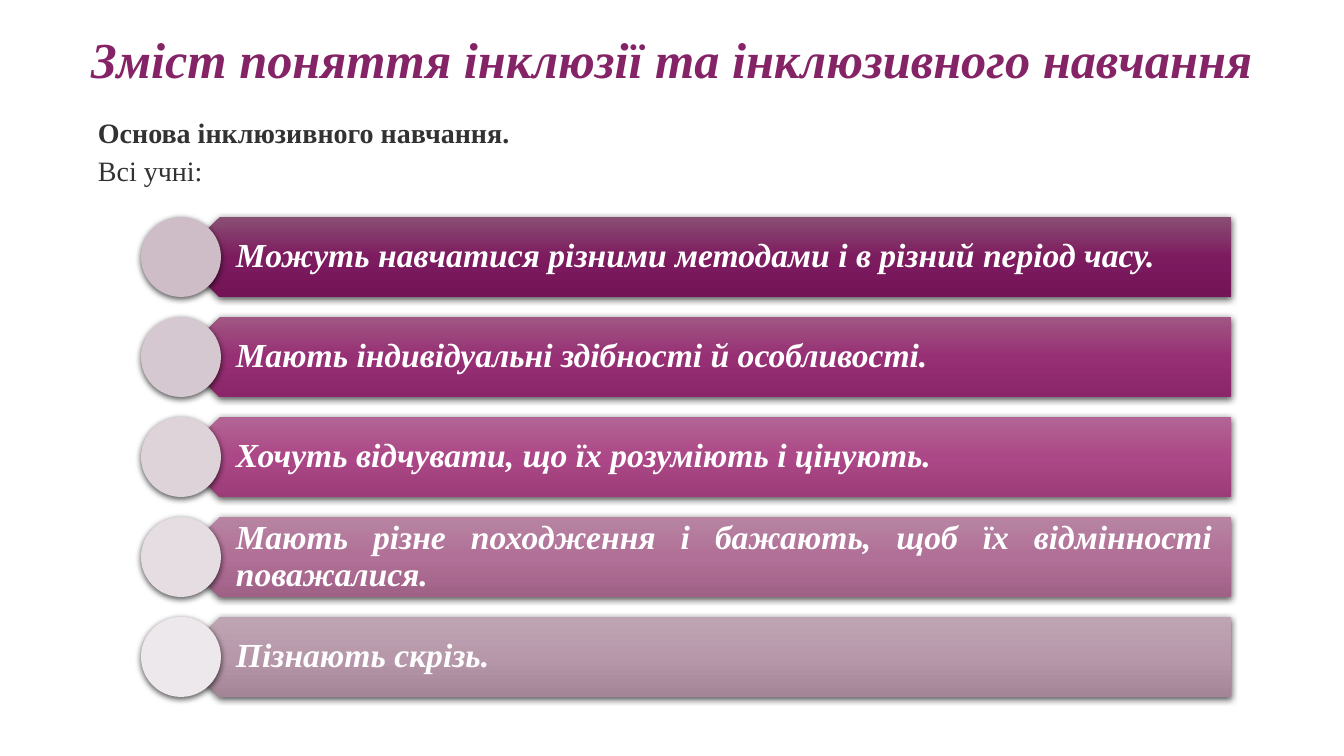
from pptx import Presentation
from pptx.dml.color import RGBColor
from pptx.enum.shapes import MSO_SHAPE as SHAPE
from pptx.enum.text import MSO_ANCHOR as ANCHOR, MSO_AUTO_SIZE as AUTO, PP_ALIGN as ALIGN
from pptx.oxml import parse_xml
from pptx.oxml.ns import nsdecls, qn
from pptx.util import Pt

PX = 9144000 / 1008  # EMU per px, 100.8 px to the inch


def box(left, top, width, height, shape=None):
    """Add a text box, or a borderless preset shape with a soft shadow."""
    area = [round(v * PX) for v in (left, top, width, height)]
    if shape is None:
        return slide.shapes.add_textbox(*area)
    item = slide.shapes.add_shape(shape, *area)
    item.line.fill.background()
    item.shadow.inherit = False
    item._element.spPr.find(qn("a:effectLst")).append(parse_xml(
        f'<a:outerShdw {nsdecls("a")} blurRad="57150" dist="19050" dir="5400000" '
        'algn="ctr" rotWithShape="0"><a:srgbClr val="000000">'
        '<a:alpha val="63000"/></a:srgbClr></a:outerShdw>'))
    return item


def write(item, text, size, color, align, spacing, bold=True, italic=True):
    """Fill an item with text in one uniform style."""
    frame = item.text_frame
    frame.word_wrap = True
    frame.text = text
    for paragraph in frame.paragraphs:
        paragraph.alignment = align
        paragraph.line_spacing = spacing
        for run in paragraph.runs:
            font = run.font
            font.name, font.size = "Times New Roman", Pt(size)
            font.bold, font.italic = bold, italic
            font.color.rgb = RGBColor.from_string(color)
    return frame


prs = Presentation()
prs.slide_width, prs.slide_height = round(1344 * PX), round(756 * PX)
slide = prs.slides.add_slide(prs.slide_layouts[6])

# Title
title = write(box(48, 28, 1248, 66), "Зміст поняття інклюзії та інклюзивного навчання",
              36, "852367", ALIGN.CENTER, 0.9)
title.vertical_anchor = ANCHOR.BOTTOM

# Introduction
intro = write(box(48, 106, 1248, 88), "Основа інклюзивного навчання.\nВсі учні:",
              20, "323232", ALIGN.JUSTIFY, 1.14, italic=False)
intro.auto_size = AUTO.SHAPE_TO_FIT_TEXT
intro.paragraphs[1].runs[0].font.bold = False
for paragraph in intro.paragraphs:
    paragraph._p.get_or_add_pPr().set("indent", str(round(40 * PX)))

# Principles: text, bar gradient from top to bottom, circle colour
principles = [
    ("Можуть навчатися різними методами і в різний період часу.",
     ("894F73", "7D1B5F", "731456"), "CEBDC7"),
    ("Мають індивідуальні здібності й особливості.",
     ("A05783", "972F74", "8A2669"), "D6C8D0"),
    ("Хочуть відчувати, що їх розуміють і цінують.",
     ("B26594", "AC4887", "9C3C79"), "DDD3D9"),
    ("Мають різне походження і бажають, щоб їх відмінності поважалися.",
     ("B784A2", "B17097", "A06187"), "E5DDE2"),
    ("Пізнають скрізь.",
     ("BEA5B3", "B798AA", "A48597"), "EDE8EB"),
]
for row, (principle, shades, circle_color) in enumerate(principles):
    top = 217 + 100 * row

    # Bar pointing left
    bar = box(180, top, 1051, 80, SHAPE.PENTAGON)
    bar.rotation = 180
    stops = "".join(f'<a:gs pos="{i * 50000}"><a:srgbClr val="{shade}"/></a:gs>'
                    for i, shade in enumerate(shades))
    bar._element.spPr.find(qn("a:prstGeom")).addnext(parse_xml(
        f'<a:gradFill {nsdecls("a")} rotWithShape="0"><a:gsLst>{stops}</a:gsLst>'
        '<a:lin ang="5400000" scaled="0"/></a:gradFill>'))

    # Bar text
    label = write(box(201, top, 1030, 80), principle, 24, "FFFFFF", ALIGN.JUSTIFY, 0.9)
    label.vertical_anchor = ANCHOR.MIDDLE
    label.margin_left, label.margin_right = round(35 * PX), round(19 * PX)
    label.margin_top = label.margin_bottom = round(10 * PX)

    # Circle
    circle = box(141, top, 80, 80, SHAPE.OVAL)
    circle.fill.solid()
    circle.fill.fore_color.rgb = RGBColor.from_string(circle_color)

prs.save("out.pptx")
